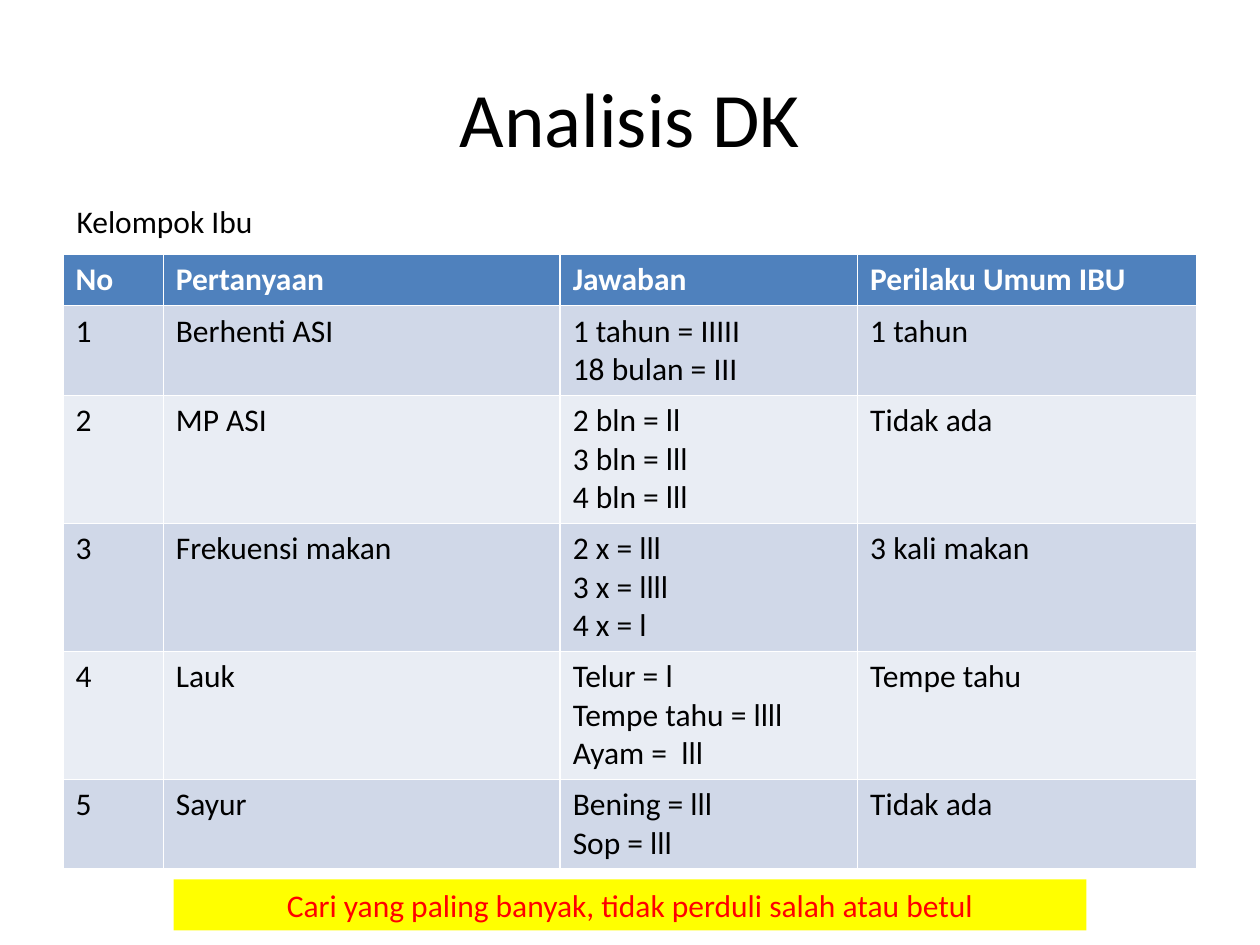
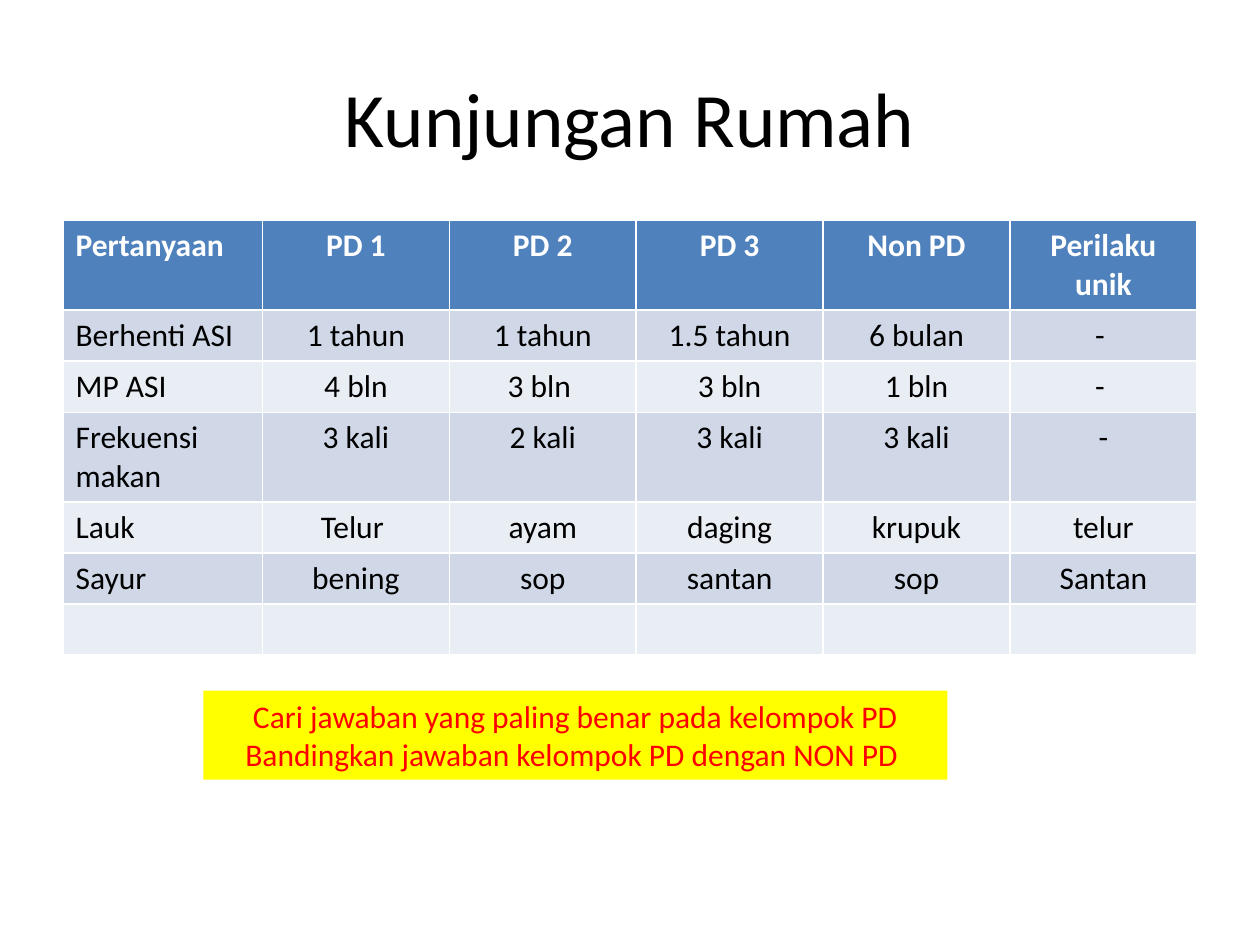
import pptx
import pptx.util
import pptx.dml.color
import pptx.enum.shapes
import pptx.enum.text

Pt = pptx.util.Pt
RGB = pptx.dml.color.RGBColor.from_string
ALIGN = pptx.enum.text.PP_ALIGN
ANCHOR = pptx.enum.text.MSO_ANCHOR
RECT = pptx.enum.shapes.MSO_SHAPE.RECTANGLE

# Shared look
FONT = "Calibri"
COLORS = {
    "text": "000000",
    "head": "4F81BD",
    "white": "FFFFFF",
    "odd": "D0D8E8",
    "even": "E9EDF4",
    "note": "FFFF00",
    "alert": "FF0000",
}
LEFT, WIDTH = 36, 648
LINE, PAD = 22, 7.2  # height of a text line, cell padding above plus below

# Content of the slides
pages = [
    {
        "title": "Analisis DK",
        "label": "Kelompok Ibu",
        "top": 145.5,
        "cols": [57.3, 226.8, 170, 193.9],
        "align": ALIGN.LEFT,
        "lines": [1, 2, 3, 3, 3, 2],
        "rows": [
            ["No", "Pertanyaan", "Jawaban", "Perilaku Umum IBU"],
            ["1", "Berhenti ASI", "1 tahun = IIIII\n18 bulan = III", "1 tahun"],
            ["2", "MP ASI", "2 bln = ll\n3 bln = lll\n4 bln = lll", "Tidak ada"],
            ["3", "Frekuensi makan", "2 x = lll\n3 x = llll\n4 x = l", "3 kali makan"],
            ["4", "Lauk", "Telur = l\nTempe tahu = llll\nAyam =  lll", "Tempe tahu"],
            ["5", "Sayur", "Bening = lll\nSop = lll", "Tidak ada"],
        ],
        "note": "Cari yang paling banyak, tidak perduli salah atau betul",
        "box": [99.2, 502.5, 521.6, 29.1],
    },
    {
        "title": "Kunjungan Rumah",
        "label": None,
        "top": 126,
        "cols": [114] + [106.8] * 5,
        "align": ALIGN.CENTER,
        "lines": [2, 1, 1, 2, 1, 1, 1],
        "rows": [
            ["Pertanyaan", "PD 1", "PD 2", "PD 3", "Non PD", "Perilaku unik"],
            ["Berhenti ASI", "1 tahun", "1 tahun", "1.5 tahun", "6 bulan", "- "],
            ["MP ASI", "4 bln", "3 bln ", "3 bln", "1 bln", "- "],
            ["Frekuensi makan", "3 kali", "2 kali", "3 kali", "3 kali", "-"],
            ["Lauk", "Telur ", "ayam", "daging", "krupuk", "telur"],
            ["Sayur", "bening", "sop", "santan", "sop", "Santan"],
            [""] * 6,
        ],
        "note": "Cari jawaban yang paling benar pada kelompok PD\n"
                "Bandingkan jawaban kelompok PD dengan NON PD ",
        "box": [116.2, 394.7, 425.2, 50.9],
    },
]


def write(frame, text, color, align=ALIGN.LEFT, size=18, bold=False):
    frame.word_wrap = True
    frame.text = text
    for para in frame.paragraphs:
        para.alignment = align
        para.font.name = FONT
        para.font.size = Pt(size)
        para.font.bold = bold
        para.font.color.rgb = RGB(COLORS[color])


deck = pptx.Presentation()
deck.slide_width, deck.slide_height = Pt(720), Pt(540)

for page in pages:
    slide = deck.slides.add_slide(deck.slide_layouts[6])
    shapes = slide.shapes

    # Title
    title = shapes.add_textbox(Pt(LEFT), Pt(21.6), Pt(WIDTH), Pt(90)).text_frame
    write(title, page["title"], "text", ALIGN.CENTER, 44)
    title.vertical_anchor = ANCHOR.MIDDLE

    # Table, with a header row and alternating bands
    rows, cols, lines = page["rows"], page["cols"], page["lines"]
    high = [PAD + LINE * count for count in lines]
    table = shapes.add_table(len(rows), len(cols), Pt(LEFT), Pt(page["top"]),
                             Pt(WIDTH), Pt(sum(high))).table
    for c, wide in enumerate(cols):
        table.columns[c].width = Pt(wide)
    for r, row in enumerate(rows):
        table.rows[r].height = Pt(high[r])
        band = "head" if r == 0 else "odd" if r % 2 else "even"
        for c, text in enumerate(row):
            cell = table.cell(r, c)
            cell.fill.solid()
            cell.fill.fore_color.rgb = RGB(COLORS[band])
            write(cell.text_frame, text, "text" if r else "white",
                  page["align"] if c else ALIGN.LEFT, bold=r == 0)

    # Yellow note
    note = shapes.add_shape(RECT, *[Pt(n) for n in page["box"]])
    note.shadow.inherit = False
    note.fill.solid()
    note.fill.fore_color.rgb = RGB(COLORS["note"])
    note.line.fill.background()
    write(note.text_frame, page["note"], "alert", ALIGN.CENTER)
    note.text_frame.vertical_anchor = ANCHOR.TOP

    # Group label above the table
    if page["label"]:
        label = shapes.add_textbox(Pt(36.7), Pt(111.6), Pt(198.7), Pt(29.1))
        write(label.text_frame, page["label"], "text")

deck.save("out.pptx")
